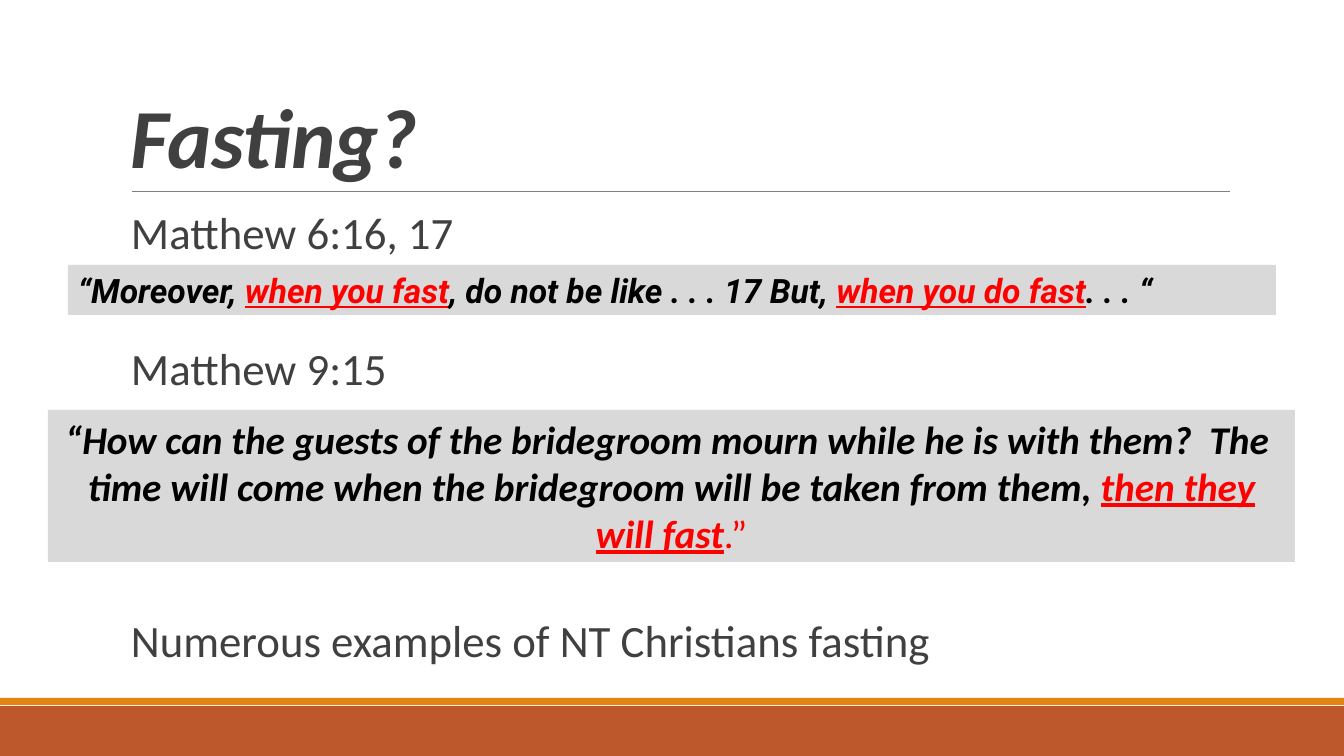
from pptx import Presentation
from pptx.dml.color import RGBColor
from pptx.enum.shapes import MSO_CONNECTOR, MSO_SHAPE
from pptx.enum.text import MSO_ANCHOR, PP_ALIGN
from pptx.oxml.ns import qn
from pptx.util import Pt
from lxml import etree

PX = 914400 / 100.8
COLORS = {
    "rust": "BD582C",
    "orange": "E48312",
    "rule": "808080",
    "heading": "404040",
    "panel": "D9D9D9",
    "black": "000000",
    "red": "FF0000",
}


def add_panel(slide, box, color):
    panel = slide.shapes.add_shape(MSO_SHAPE.RECTANGLE, *[round(v * PX) for v in box])
    panel.shadow.inherit = False
    panel.fill.solid()
    panel.fill.fore_color.rgb = RGBColor.from_string(COLORS[color])
    panel.line.fill.background()
    return panel


def add_run(paragraph, text, font, size, color, bold=False, italic=False, underline=False):
    run = paragraph.add_run()
    run.text = text
    run.font.name = font
    run.font.size = Pt(size)
    run.font.color.rgb = RGBColor.from_string(COLORS[color])
    run.font.bold = bold
    run.font.italic = italic
    run.font.underline = underline
    return run


prs = Presentation()
prs.slide_width = round(1344 * PX)
prs.slide_height = round(756 * PX)
slide = prs.slides.add_slide(prs.slide_layouts[6])

add_panel(slide, (0, 706, 1344, 50), "rust")
add_panel(slide, (0, 698, 1344, 7), "orange")

title_rule = slide.shapes.add_connector(
    MSO_CONNECTOR.STRAIGHT, *[round(v * PX) for v in (132, 191, 1230, 191)]
)
title_rule.line.color.rgb = RGBColor.from_string(COLORS["rule"])
title_rule.line.width = Pt(0.5)
etree.SubElement(title_rule._element.spPr, qn("a:effectLst"))

title = slide.shapes.add_textbox(*[round(v * PX) for v in (121, 31, 1109, 160)])
title.text_frame.word_wrap = True
title.text_frame.vertical_anchor = MSO_ANCHOR.BOTTOM
title_line = title.text_frame.paragraphs[0]
title_line.line_spacing = 0.85
title_run = add_run(title_line, "Fasting?", "Calibri", 60, "heading", bold=True, italic=True)
title_run.font._element.set("spc", "-50")

POINTS = [
    (205, "Matthew 6:16, 17"),
    (341, "Matthew 9:15"),
    (613, "Numerous examples of NT Christians fasting"),
]
for top, text in POINTS:
    point = slide.shapes.add_textbox(*[round(v * PX) for v in (131, top, 1099, 55)])
    frame = point.text_frame
    frame.word_wrap = True
    frame.margin_left = frame.margin_right = frame.margin_top = frame.margin_bottom = 0
    add_run(frame.paragraphs[0], text, "Calibri", 32, "heading")

PLAIN = ("black", True, True, False)
STRESSED = ("red", True, True, True)
CLOSING = ("red", False, False, False)
QUOTES = [
    ((68, 265, 1208, 50), "Roboto", 24, PP_ALIGN.LEFT, [
        [
            ("“Moreover,\u00a0".replace("\u00a0", " "), PLAIN),
            ("when you fast", STRESSED),
            (", do not be like . . . 17 But, ", PLAIN),
            ("when you do fast", STRESSED),
            (". . . “", PLAIN),
        ],
    ]),
    ((48, 410, 1247, 152), "Calibri", 28, PP_ALIGN.CENTER, [
        [("“How can the guests of the bridegroom mourn while he is with them?  The ", PLAIN)],
        [
            ("time will come when the bridegroom will be taken from them, ", PLAIN),
            ("then they", STRESSED),
        ],
        [("will fast", STRESSED), (".”", CLOSING)],
    ]),
]
for box, font, size, alignment, lines in QUOTES:
    frame = add_panel(slide, box, "panel").text_frame
    frame.word_wrap = True
    frame.vertical_anchor = MSO_ANCHOR.TOP
    for index, pieces in enumerate(lines):
        line = frame.add_paragraph() if index else frame.paragraphs[0]
        line.alignment = alignment
        for text, style in pieces:
            add_run(line, text, font, size, *style)

prs.save("out.pptx")
